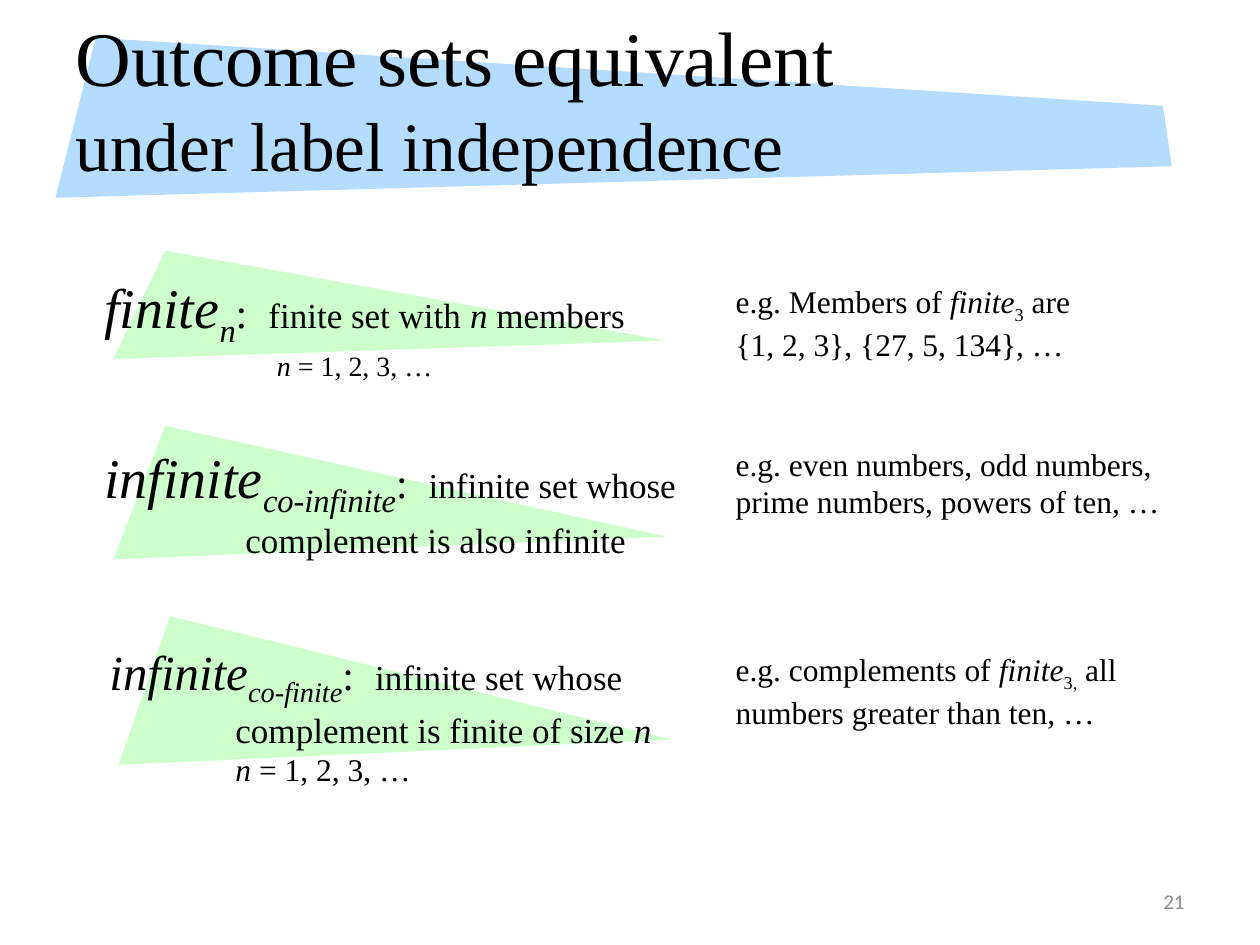
"""Build the slide on outcome sets that are equivalent under label independence."""
from dataclasses import dataclass

from pptx import Presentation
from pptx.dml.color import RGBColor
from pptx.enum import text
from pptx.util import Inches, Pt


@dataclass(frozen=True)
class Theme:
    serif: str = "Times New Roman"
    sans: str = "Calibri"
    ink: str = "000000"
    muted: str = "8C8C8C"
    banner: str = "B4DCFF"
    wedge: str = "CCFFCC"
    title: float = 44.1
    subtitle: float = 39.6
    term: float = 32
    small_term: float = 28
    colon: float = 24
    body: float = 20
    example: float = 18
    note: float = 16
    number: float = 12


class SlideBuilder:
    def __init__(self, slide, theme):
        self.slide = slide
        self.theme = theme

    def polygon(self, corners, color):
        points = [(Inches(x), Inches(y)) for x, y in corners]
        builder = self.slide.shapes.build_freeform(*points[0], scale=1.0)
        builder.add_line_segments(points[1:], close=True)
        outline = builder.convert_to_shape()
        outline.shadow.inherit = False
        outline.fill.solid()
        outline.fill.fore_color.rgb = RGBColor.from_string(color)
        outline.line.fill.background()

    def wedge(self, left, top, height):
        corners = [(left + 0.41, top), (left, top + height),
                   (left + 4.39, top + 0.83 * height)]
        self.polygon(corners, self.theme.wedge)

    def text(self, box, paragraphs, size, hang=0, wrap=True, middle=False,
             align=text.PP_ALIGN.LEFT, font=None, color=None):
        frame = self.slide.shapes.add_textbox(*map(Inches, box)).text_frame
        frame.word_wrap = wrap
        frame.vertical_anchor = text.MSO_ANCHOR.MIDDLE if middle else text.MSO_ANCHOR.TOP
        for index, pieces in enumerate(paragraphs):
            paragraph = frame.add_paragraph() if index else frame.paragraphs[0]
            paragraph.alignment = align
            paragraph.font.name = font or self.theme.serif
            paragraph.font.size = Pt(size)
            paragraph.font.color.rgb = RGBColor.from_string(color or self.theme.ink)
            if hang:
                properties = paragraph._p.get_or_add_pPr()
                properties.set("marL", str(Inches(hang)))
                properties.set("indent", str(-Inches(hang)))
            for piece in pieces:
                self.run(paragraph, *piece)

    def run(self, paragraph, words, style="", size=None):
        if words == "\n":
            paragraph.add_line_break()
            return
        run = paragraph.add_run()
        run.text = words
        if size:
            run.font.size = Pt(size)
        if "i" in style:
            run.font.italic = True
        if "s" in style:
            run._r.get_or_add_rPr().set("baseline", "-25000")

    def definition(self, box, term, subscript, meaning, hang, term_size, wrap=True):
        heading = [(term, "i", term_size), (subscript, "is", term_size),
                   (":  ", "", self.theme.colon)]
        self.text(box, [heading + meaning], self.theme.body, hang, wrap)

    def example(self, top, width, paragraphs):
        self.text((5.74, top, width, 0.71), paragraphs, self.theme.example)


def main():
    theme = Theme()
    deck = Presentation()
    deck.slide_width, deck.slide_height = Inches(10), Inches(7.5)
    page = SlideBuilder(deck.slides.add_slide(deck.slide_layouts[6]), theme)

    page.polygon([(0.76, 0.3), (9.23, 0.84), (9.3, 1.32), (0.44, 1.57)], theme.banner)
    page.text((0.5, 0.3, 8.37, 0.94),
              [[("Outcome sets equivalent",), ("\n",),
                ("under label independence", "", theme.subtitle)]],
              theme.title, middle=True)
    page.text((7.17, 6.95, 2.33, 0.4), [[("21",)]], theme.number, middle=True,
              align=text.PP_ALIGN.RIGHT, font=theme.sans, color=theme.muted)

    page.wedge(0.9, 1.99, 0.86)
    page.definition((0.73, 2.11, 4.4, 0.91), "finite", "n",
                    [("finite set with ",), ("n", "i"), (" members",), ("\n",),
                     ("n", "i", theme.note), (" = 1, 2, 3, …", "", theme.note)],
                    1.37, theme.term, wrap=False)
    page.example(2.19, 2.86, [[("e.g. Members of ",), ("finite", "i"), ("3", "s"), (" are",)],
                              [("{1, 2, 3}, {27, 5, 134}, …",)]])

    page.wedge(0.9, 3.38, 1.06)
    page.definition((0.73, 3.46, 4.96, 1.45), "infinite", "co-infinite",
                    [("infinite set whose complement is also infinite",)],
                    1.12, theme.term)
    page.example(3.48, 3.93,
                 [[("e.g. even numbers, odd numbers, prime numbers, powers of ten, …",)]])

    page.wedge(0.94, 4.89, 1.18)
    page.definition((0.77, 5.04, 4.69, 1.51), "infinite", "co-finite",
                    [("infinite set whose complement is finite of size ",), ("n", "i"),
                     ("\n",), ("n", "i", theme.example),
                     (" = 1, 2, 3, …", "", theme.example)],
                    1, theme.small_term)
    page.example(5.11, 3.46, [[("e.g. complements of ",), ("finite", "i"), ("3,", "s"),
                               (" all numbers greater than ten, …",)]])

    deck.save("out.pptx")


if __name__ == "__main__":
    main()
